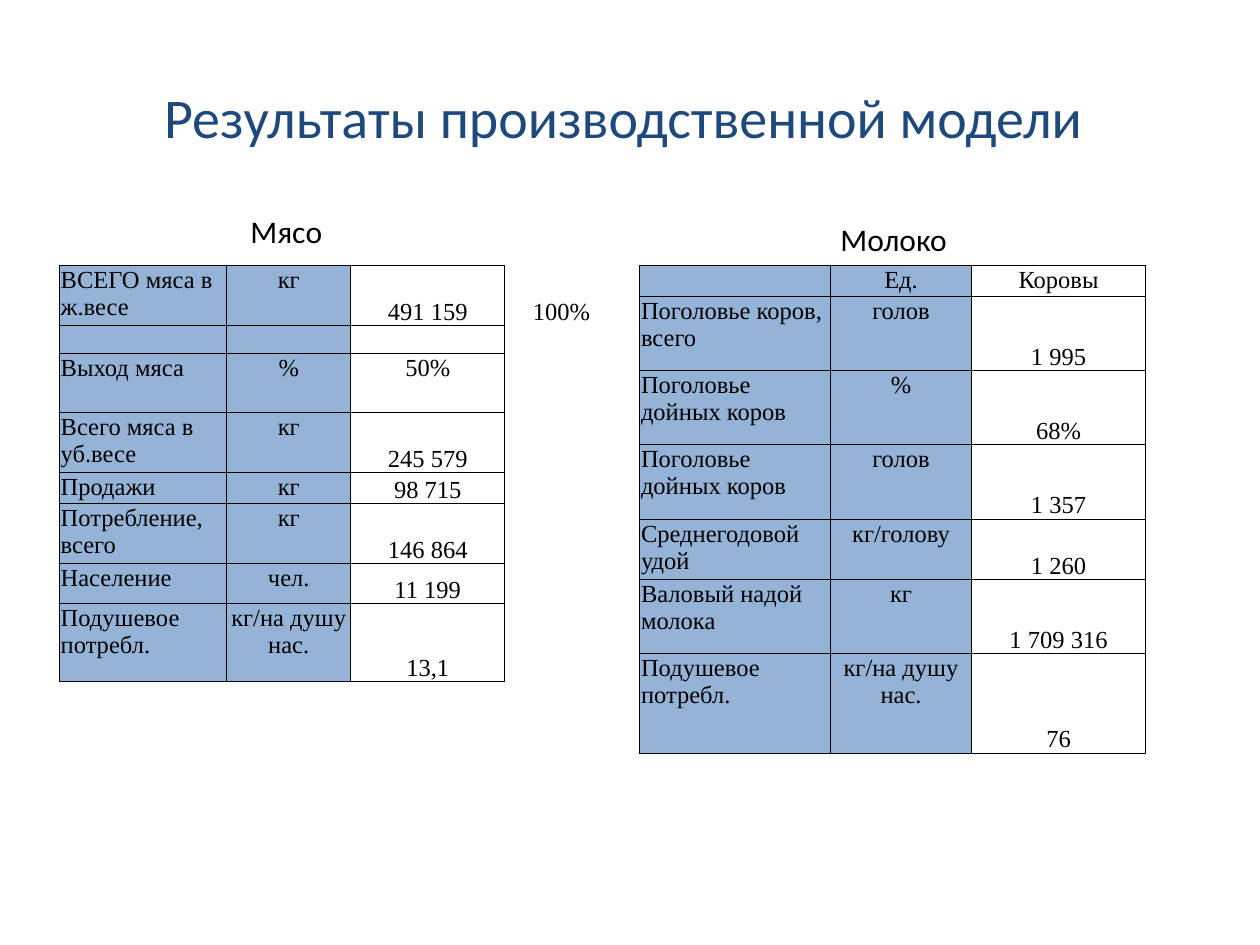
import pptx
import pptx.dml.color
import pptx.enum.text
import pptx.oxml
import pptx.oxml.ns
import pptx.util
import lxml.etree

Pt = pptx.util.Pt
ALIGN = pptx.enum.text.PP_ALIGN
ANCHOR = pptx.enum.text.MSO_ANCHOR
LABEL_FILL = "95B3D7"

MEAT_ROWS = [
    ("ВСЕГО мяса в ж.весе", "кг", "491 159", "100%"),
    ("", "", "", ""),
    ("Выход мяса", "%", "50%", ""),
    ("Всего мяса в уб.весе", "кг", "245 579", ""),
    ("Продажи", "кг", "98 715", ""),
    ("Потребление, всего", "кг", "146 864", ""),
    ("Население", "чел.", "11 199", ""),
    ("Подушевое потребл.", "кг/на душу нас.", "13,1", ""),
]
MILK_ROWS = [
    ("", "Ед.", "Коровы"),
    ("Поголовье коров, всего", "голов", "1 995"),
    ("Поголовье дойных коров", "%", "68%"),
    ("Поголовье дойных коров", "голов", "1 357"),
    ("Среднегодовой удой", "кг/голову", "1 260"),
    ("Валовый надой молока", "кг", "1 709 316"),
    ("Подушевое потребл.", "кг/на душу нас.", "76"),
]


def color(value):
    return pptx.dml.color.RGBColor.from_string(value)


class SlideWriter:
    heading_font = "Calibri"
    table_font = "Times New Roman"
    table_size = 14
    text_color = "000000"
    border_width = 0.5

    def __init__(self, slide):
        self.slide = slide

    def add_run(self, paragraph, text, font, size, text_color):
        run = paragraph.add_run()
        run.text = text
        run.font.name = font
        run.font.size = Pt(size)
        run.font.color.rgb = color(text_color)

    def text(self, text, left, top, width, height, size=18,
             text_color=None, align=ALIGN.LEFT, anchor=ANCHOR.TOP):
        shape = self.slide.shapes.add_textbox(
            Pt(left), Pt(top), Pt(width), Pt(height))
        frame = shape.text_frame
        frame.word_wrap = True
        frame.vertical_anchor = anchor
        paragraph = frame.paragraphs[0]
        paragraph.alignment = align
        self.add_run(paragraph, text, self.heading_font, size,
                     text_color or self.text_color)

    def border(self, cell, sides):
        """Draw the given sides, named L, R, T and B; clear the others."""
        properties = cell._tc.get_or_add_tcPr()
        for index, side in enumerate("LRTB"):
            line = lxml.etree.Element(pptx.oxml.ns.qn(f"a:ln{side}"))
            if side in sides:
                line.set("w", str(Pt(self.border_width)))
                fill = lxml.etree.SubElement(line, pptx.oxml.ns.qn("a:solidFill"))
                lxml.etree.SubElement(
                    fill, pptx.oxml.ns.qn("a:srgbClr"), val=self.text_color)
            else:
                lxml.etree.SubElement(line, pptx.oxml.ns.qn("a:noFill"))
            properties.insert(index, line)

    def cell(self, cell, text, column, anchor):
        """Columns are label, unit, value and an unframed remark."""
        cell.margin_left = cell.margin_right = cell.margin_top = Pt(0.7)
        cell.margin_bottom = 0
        cell.vertical_anchor = anchor
        if column < 2:
            cell.fill.solid()
            cell.fill.fore_color.rgb = color(LABEL_FILL)
        else:
            cell.fill.background()
        self.border(cell, "L" if column == 3 else "LRTB")
        paragraph = cell.text_frame.paragraphs[0]
        paragraph.alignment = (
            ALIGN.LEFT, ALIGN.CENTER, ALIGN.CENTER, ALIGN.RIGHT)[column]
        if text:
            self.add_run(paragraph, text, self.table_font,
                         self.table_size, self.text_color)
        else:
            lxml.etree.SubElement(
                paragraph._p, pptx.oxml.ns.qn("a:endParaRPr"),
                sz=str(self.table_size * 100 - 200))

    def table(self, rows, left, top, widths, heights, top_values):
        """Values sit at the bottom, except in the rows of top_values."""
        frame = self.slide.shapes.add_table(
            len(rows), len(widths), Pt(left), Pt(top),
            Pt(sum(widths)), Pt(sum(heights)))
        table = frame.table
        table.first_row = table.horz_banding = False
        for column, width in zip(table.columns, widths):
            column.width = Pt(width)
        for row, height in zip(table.rows, heights):
            row.height = Pt(height)
        for row, texts in enumerate(rows):
            for column, text in enumerate(texts):
                at_bottom = column >= 2 and row not in top_values
                self.cell(table.cell(row, column), text, column,
                          ANCHOR.BOTTOM if at_bottom else ANCHOR.TOP)


def main():
    presentation = pptx.Presentation()
    presentation.slide_width = Pt(720)
    presentation.slide_height = Pt(540)
    slide = presentation.slides.add_slide(presentation.slide_layouts[6])
    writer = SlideWriter(slide)
    writer.text("Результаты производственной модели ", 36, 21.6, 648, 90,
                size=32, text_color="1F497D", align=ALIGN.CENTER,
                anchor=ANCHOR.MIDDLE)
    writer.table(MEAT_ROWS, 34, 151.7, (95.6, 70.9, 88, 49.5),
                 (32, 16, 33.8, 33.8, 16.4, 31.6, 22.8, 44.7), (2,))
    writer.table(MILK_ROWS, 365.6, 151.7, (109, 80.6, 99.4),
                 (16.4, 42.5, 42.5, 42.5, 32, 42.5, 56.8), (0,))
    writer.text("Мясо", 136, 117.4, 82.8, 29)
    writer.text("Молоко", 473.2, 122, 164, 29)
    presentation.save("out.pptx")


if __name__ == "__main__":
    main()
